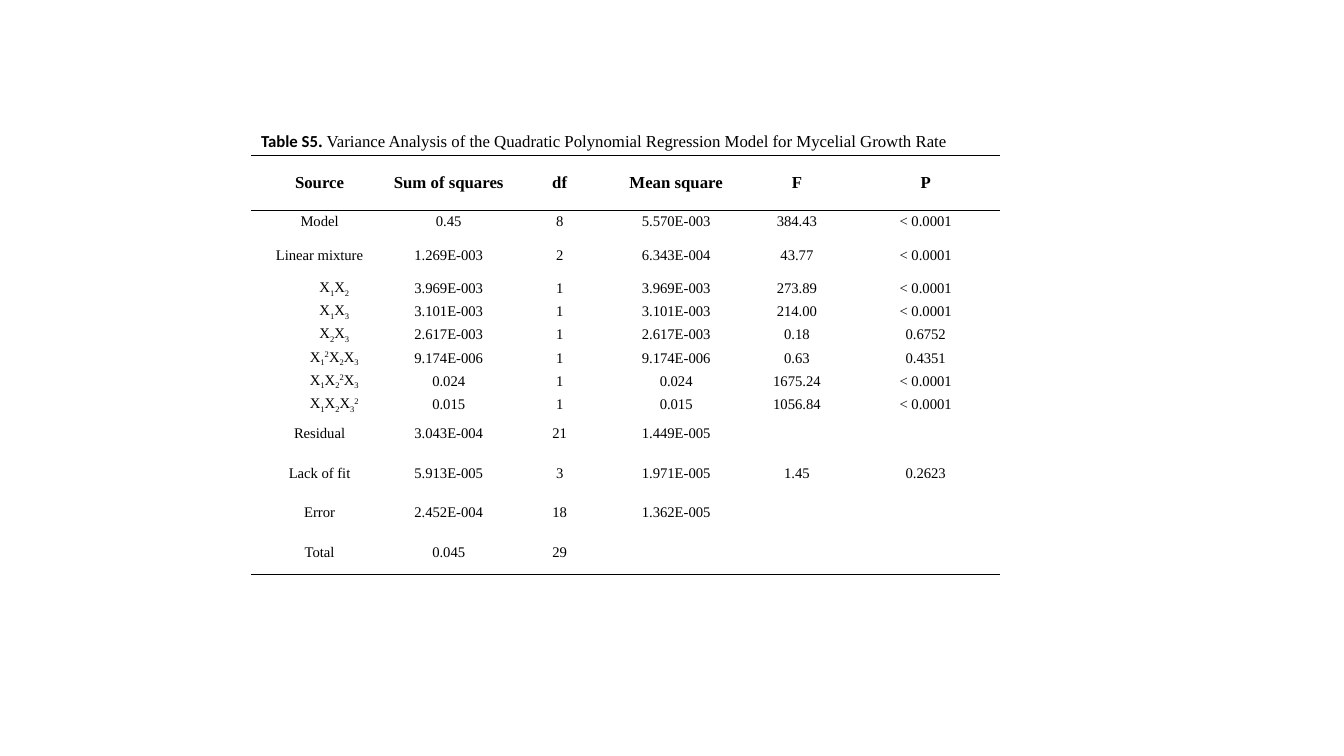
from pptx import Presentation
from pptx.dml.color import RGBColor
from pptx.enum.text import MSO_ANCHOR as Anchor, MSO_AUTO_SIZE as AutoSize, PP_ALIGN as Align
from pptx.oxml.xmlchemy import OxmlElement as new_element
from pptx.util import Pt

COLORS = {"ink": "000000"}
SERIF, SANS = "Times New Roman", "Calibri"
BASELINES = {"_": "-25000", "^": "30000"}
TERM_INDENT = 21

CAPTION = [
    ("Table S5", {"name": SANS, "bold": True}),
    (". ", {"name": SERIF, "bold": True}),
    ("Variance Analysis of the Quadratic Polynomial Regression Model for Mycelial Growth Rate",
     {"name": SERIF, "bold": False}),
]

COLUMN_WIDTHS = [98, 86.5, 72, 94.5, 78, 106]
# Row height, then the cells; _ marks a subscript digit and ^ a superscript digit
ROWS = [
    (39, ["Source", "Sum of squares", "df", "Mean square", "F", "P"]),
    (16.6, ["Model", "0.45", "8", "5.570E-003", "384.43", "< 0.0001"]),
    (31, ["Linear mixture", "1.269E-003", "2", "6.343E-004", "43.77", "< 0.0001"]),
    (16.6, ["X_1X_2", "3.969E-003", "1", "3.969E-003", "273.89", "< 0.0001"]),
    (16.6, ["X_1X_3", "3.101E-003", "1", "3.101E-003", "214.00", "< 0.0001"]),
    (16.6, ["X_2X_3", "2.617E-003", "1", "2.617E-003", "0.18", "0.6752"]),
    (16.6, ["X_1^2X_2X_3", "9.174E-006", "1", "9.174E-006", "0.63", "0.4351"]),
    (16.6, ["X_1X_2^2X_3", "0.024", "1", "0.024", "1675.24", "< 0.0001"]),
    (16.6, ["X_1X_2X_3^2", "0.015", "1", "0.015", "1056.84", "< 0.0001"]),
    (25.4, ["Residual", "3.043E-004", "21", "1.449E-005", "", ""]),
    (31, ["Lack of fit", "5.913E-005", "3", "1.971E-005", "1.45", "0.2623"]),
    (25.4, ["Error", "2.452E-004", "18", "1.362E-005", "", ""]),
    (31, ["Total", "0.045", "29", "", "", ""]),
]


def set_all(target, values):
    for name, value in values.items():
        setattr(target, name, value)


def add_run(paragraph, text, **font_values):
    run = paragraph.add_run()
    run.text = text
    set_all(run.font, font_values)
    run.font.color.rgb = RGBColor.from_string(COLORS["ink"])
    return run


def add_term(paragraph, term, **font_values):
    """Write a term such as X_1^2 with lowered and raised digits."""
    paragraph._p.get_or_add_pPr().set("indent", str(Pt(TERM_INDENT)))
    mark = None
    for character in term:
        if character in BASELINES:
            mark = character
            continue
        run = add_run(paragraph, character, **font_values)
        if mark:
            run._r.get_or_add_rPr().set("baseline", BASELINES[mark])
        mark = None


def set_borders(cell, ruled_sides):
    """Rule the named sides in black and clear the others."""
    properties = cell._tc.get_or_add_tcPr()
    for side in "LRTB":
        line = new_element(f"a:ln{side}")
        properties.append(line)
        if side in ruled_sides:
            line.set("w", str(Pt(1)))
            fill = new_element("a:solidFill")
            color = new_element("a:srgbClr")
            color.set("val", COLORS["ink"])
            fill.append(color)
            line.append(fill)
        else:
            line.append(new_element("a:noFill"))


def add_caption(slide, left, top, width, height):
    title = slide.shapes.title
    set_all(title, {"left": Pt(left), "top": Pt(top), "width": Pt(width), "height": Pt(height)})
    frame = title.text_frame
    set_all(frame, {"word_wrap": True, "auto_size": AutoSize.NONE, "vertical_anchor": Anchor.TOP})
    paragraph = frame.paragraphs[0]
    set_all(paragraph, {"alignment": Align.JUSTIFY, "line_spacing": 1.0})
    for text, font_values in CAPTION:
        add_run(paragraph, text, size=Pt(12), **font_values)


def fill_cell(cell, text, is_header, ruled_sides):
    inset = Pt(0.7)
    set_all(cell, {"margin_left": inset, "margin_right": inset, "margin_top": inset,
                   "margin_bottom": inset, "vertical_anchor": Anchor.MIDDLE})
    set_borders(cell, ruled_sides)
    cell.fill.background()
    if text:
        paragraph = cell.text_frame.paragraphs[0]
        paragraph.alignment = Align.CENTER
        write = add_term if "_" in text else add_run
        write(paragraph, text, name=SERIF, size=Pt(12 if is_header else 10.5), bold=is_header)


def add_variance_table(slide, left, top):
    width, height = sum(COLUMN_WIDTHS), sum(row_height for row_height, _ in ROWS)
    table = slide.shapes.add_table(len(ROWS), len(COLUMN_WIDTHS), Pt(left), Pt(top),
                                   Pt(width), Pt(height)).table
    set_all(table, {"first_row": False, "horz_banding": False})
    for column, column_width in zip(table.columns, COLUMN_WIDTHS):
        column.width = Pt(column_width)

    # Rules run above and below the header and under the last row
    rules = {0: "TB", 1: "T", len(ROWS) - 1: "B"}
    for index, (row_height, texts) in enumerate(ROWS):
        table.rows[index].height = Pt(row_height)
        for cell, text in zip(table.rows[index].cells, texts):
            fill_cell(cell, text, index == 0, rules.get(index, ""))


def main():
    presentation = Presentation()
    set_all(presentation, {"slide_width": Pt(960), "slide_height": Pt(540)})
    slide = presentation.slides.add_slide(presentation.slide_layouts.get_by_name("Title Only"))
    left, caption_top, caption_height = 179.3, 89.5, 21.8
    add_caption(slide, left, caption_top, 663, caption_height)
    add_variance_table(slide, left, caption_top + caption_height)
    presentation.save("out.pptx")


if __name__ == "__main__":
    main()
